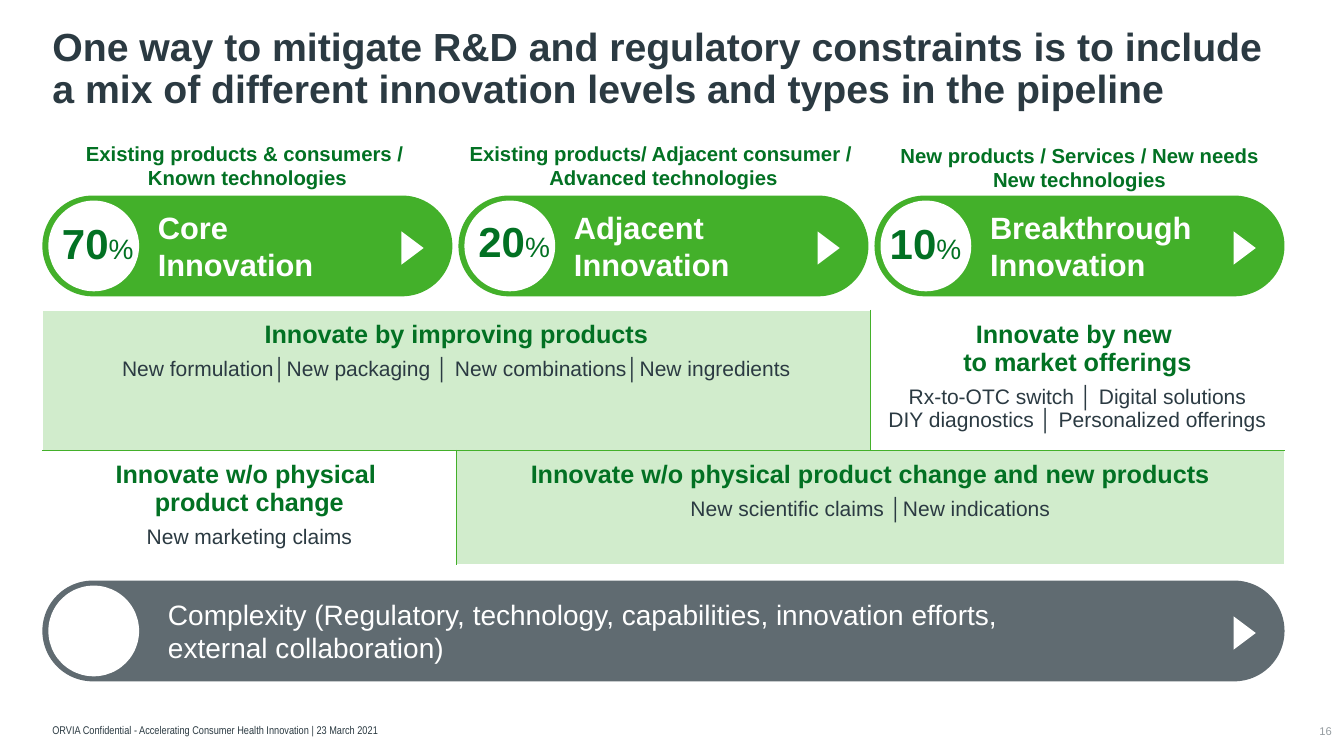
from lxml import etree
from pptx import Presentation
from pptx import util as u
from pptx.dml.color import RGBColor
from pptx.enum import shapes, text
from pptx.oxml import ns

# Content
TITLE = ("One way to mitigate R&D and regulatory constraints is to include "
         "a mix of different innovation levels and types in the pipeline")
FOOTER = "ORVIA Confidential - Accelerating Consumer Health Innovation | 23 March 2021"
PAGE = "16"
# caption, caption top, share, share left and top, name paragraphs
LEVELS = [
    ("Existing products & consumers / \nKnown technologies", 1.35,
     "70", 0.44, 2.11, ["Core \nInnovation"]),
    ("Existing products/ Adjacent consumer / \nAdvanced technologies", 1.35,
     "20", 4.57, 2.09, ["Adjacent", "Innovation"]),
    ("New products / Services / New needs\nNew technologies", 1.37,
     "10", 8.65, 2.11, ["Breakthrough \nInnovation"]),
]
# row, first column, last column, shaded, heading, details
TYPES = [
    (0, 0, 1, True, "Innovate by improving products",
     "New formulation│New packaging │ New combinations│New ingredients"),
    (0, 2, 2, False, "Innovate by new \nto market offerings",
     "Rx-to-OTC switch │ Digital solutions\nDIY diagnostics │ Personalized offerings"),
    (1, 0, 0, False, "Innovate w/o physical \nproduct change", "New marketing claims"),
    (1, 1, 2, True, "Innovate w/o physical product change and new products",
     "New scientific claims │New indications"),
]
COMPLEXITY = ("Complexity (Regulatory, technology, capabilities, innovation efforts, \n"
              "external collaboration)")

COLORS = {"ink": "2B3A42", "dark": "027123", "green": "43B02A", "pale": "D1ECCC",
          "grey": "606B71", "page": "959CA0", "white": "FFFFFF"}

# Formats
STYLES = {
    "title": {"size": 28, "bold": True, "color": "ink"},
    "footer": {"size": 8, "name": "Arial Narrow", "color": "ink"},
    "page": {"size": 8, "color": "page"},
    "level": {"size": 22, "bold": True, "color": "white"},
    "caption": {"size": 14.5, "bold": True, "color": "dark"},
    "share": {"size": 30, "bold": True, "color": "dark"},
    "percent": {"size": 20, "color": "dark"},
    "heading": {"size": 18, "bold": True, "color": "dark"},
    "detail": {"size": 15, "color": "ink"},
    "complexity": {"size": 20, "color": "white"},
}
LEFT, WIDTH, GAP = 0.42, 12.32, 0.06
PILL_HEIGHT, PILL_TOP, COMPLEXITY_TOP = 1, 1.94, 5.76
PILL_WIDTH = (WIDTH - 2 * GAP) / 3
TABLE_TOP, ROW_HEIGHTS = 3.08, (1.39, 1.13)
CENTER, RIGHT = text.PP_ALIGN.CENTER, text.PP_ALIGN.RIGHT
MIDDLE, BOTTOM = text.MSO_ANCHOR.MIDDLE, text.MSO_ANCHOR.BOTTOM

presentation = Presentation()
presentation.slide_width, presentation.slide_height = u.Inches(13.33), u.Inches(7.5)
slide = presentation.slides.add_slide(presentation.slide_layouts[5])


def inches(*lengths):
    return [u.Inches(length) for length in lengths]


def color(name):
    return RGBColor.from_string(COLORS[name])


def write(frame, paragraphs, **formats):
    """Fill a frame; each paragraph is a list of (text, style name) runs."""
    frame.word_wrap = True
    for index, runs in enumerate(paragraphs):
        paragraph = frame.paragraphs[0] if index == 0 else frame.add_paragraph()
        for name, value in ({"alignment": text.PP_ALIGN.LEFT} | formats).items():
            setattr(paragraph, name, value)
        for words, style in runs:
            for number, line in enumerate(words.split("\n")):
                if number:
                    paragraph.add_line_break()
                run = paragraph.add_run()
                run.text = line
                values = {"name": "Arial", "bold": False} | STYLES[style]
                run.font.color.rgb = color(values.pop("color"))
                values["size"] = u.Pt(values["size"])
                for name, value in values.items():
                    setattr(run.font, name, value)


def set_margins(frame, left=0):
    frame.margin_left = u.Inches(left)
    frame.margin_right = frame.margin_top = frame.margin_bottom = 0


def add_text(box, paragraphs, anchor=text.MSO_ANCHOR.TOP, **formats):
    frame = slide.shapes.add_textbox(*inches(*box)).text_frame
    frame.vertical_anchor = anchor
    write(frame, paragraphs, **formats)
    return frame


def add_shape(kind, box, fill):
    shape = slide.shapes.add_shape(kind, *inches(*box))
    shape.shadow.inherit = False
    shape.fill.solid()
    shape.fill.fore_color.rgb = color(fill)
    shape.line.fill.background()
    return shape


def add_pill(left, top, width, fill, paragraphs, indent):
    """Rounded bar with a white disc at its left and an arrowhead at its right."""
    kind = shapes.MSO_SHAPE
    pill = add_shape(kind.ROUNDED_RECTANGLE, (left, top, width, PILL_HEIGHT), fill)
    pill.adjustments[0] = 0.5
    pill.text_frame.vertical_anchor = MIDDLE
    set_margins(pill.text_frame, indent)
    write(pill.text_frame, paragraphs)
    add_shape(kind.OVAL, (left + 0.06, top + 0.05, 0.9, 0.9), "white")
    arrow = add_shape(kind.FLOWCHART_MERGE, (left + width - 0.56, top + 0.41, 0.33, 0.22), "white")
    arrow.rotation = 270


def add_border(cell, side):
    properties = cell._tc.get_or_add_tcPr()
    line = etree.Element(ns.qn("a:ln" + side), w=str(u.Pt(1)))
    fill = etree.SubElement(line, ns.qn("a:solidFill"))
    etree.SubElement(fill, ns.qn("a:srgbClr"), val=COLORS["green"])
    properties.insert(0, line)


# Title, footer and page number
title = slide.shapes.title
title.left, title.top, title.width, title.height = inches(LEFT, 0.32, 12.4, 0.84)
title.text_frame.auto_size = text.MSO_AUTO_SIZE.NONE
title.text_frame.vertical_anchor = BOTTOM
write(title.text_frame, [[(TITLE, "title")]], line_spacing=0.9)
add_text((LEFT, 6.99, 10.15, 0.37), [[(FOOTER, "footer")]], BOTTOM)
set_margins(add_text((12.82, 7.16, 0.39, 0.19), [[(PAGE, "page")]], MIDDLE, alignment=RIGHT))

# Innovation levels
for index, (caption, caption_top, share, share_left, share_top, name) in enumerate(LEVELS):
    left = LEFT + index * (PILL_WIDTH + GAP)
    add_pill(left, PILL_TOP, PILL_WIDTH, "green", [[(words, "level")] for words in name], 1)
    add_text((left, caption_top, PILL_WIDTH, 0.61), [[(caption, "caption")]], alignment=CENTER)
    add_text((share_left, share_top, 1.06, 0.61),
             [[(share, "share"), ("%", "percent")]], alignment=CENTER)

# Innovation types
box = inches(LEFT, TABLE_TOP, WIDTH, sum(ROW_HEIGHTS))
table = slide.shapes.add_table(2, 3, *box).table
table.first_row = table.horz_banding = False
for row, height in zip(table.rows, ROW_HEIGHTS):
    row.height = u.Inches(height)
for row, first, last, shaded, heading, detail in TYPES:
    cell = table.cell(row, first)
    if last > first:
        cell.merge(table.cell(row, last))
    for side in ("left", "right", "top", "bottom"):
        setattr(cell, "margin_" + side, u.Inches(0.1))
    write(cell.text_frame, [[(heading, "heading")], [(detail, "detail")]],
          alignment=CENTER, space_after=u.Pt(6))
    for column in range(first, last + 1):
        part = table.cell(row, column)
        if shaded:
            part.fill.solid()
            part.fill.fore_color.rgb = color("pale")
        else:
            part.fill.background()
        add_border(part, "T" if row else "B")
    if first:
        add_border(cell, "L")

# Complexity bar
add_pill(LEFT, COMPLEXITY_TOP, WIDTH, "grey", [[(COMPLEXITY, "complexity")]], 1.1)

presentation.save("out.pptx")
